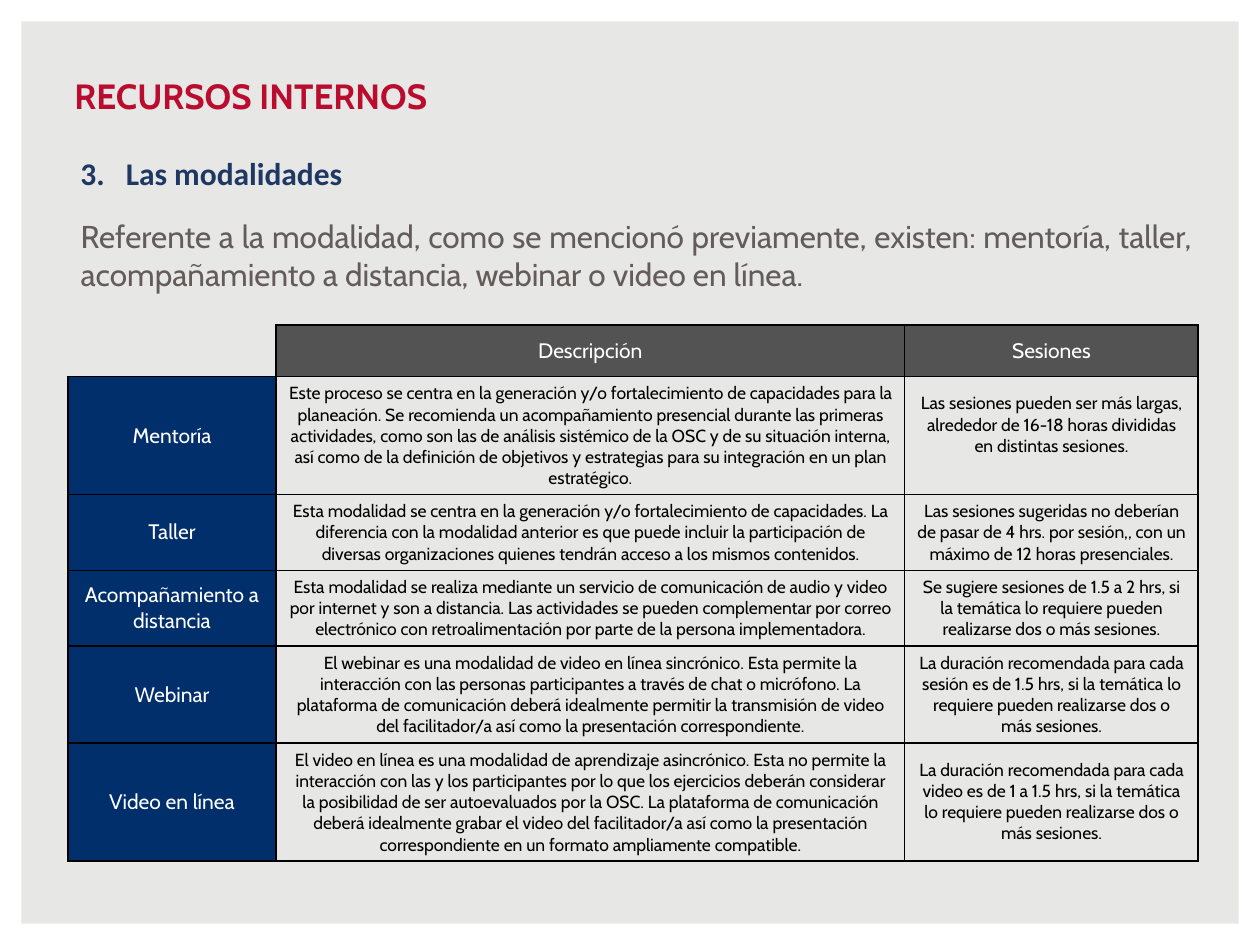
"""Build the slide on the internal resources and their modalities."""
from dataclasses import dataclass
from typing import Optional

from lxml.etree import SubElement
from pptx import Presentation
from pptx.dml.color import RGBColor
from pptx.enum.shapes import MSO_SHAPE
from pptx.enum.text import MSO_ANCHOR, MSO_AUTO_SIZE, PP_ALIGN
from pptx.oxml.ns import qn
from pptx.util import Inches, Pt


@dataclass(frozen=True)
class Theme:
    background: str = "E7E7E5"
    white: str = "FFFFFF"
    black: str = "000000"
    title: str = "BA0C2F"
    heading: str = "1F3763"
    intro: str = "635C5B"
    header_fill: str = "535353"
    label_fill: str = "002F6C"
    font: str = "Cabin"
    heading_font: str = "Calibri"
    title_size: int = 20
    lead_size: int = 18
    label_size: int = 12
    detail_size: int = 10
    border_width: int = 1


@dataclass(frozen=True)
class Modality:
    name: str
    description: str
    sessions: str
    height: float
    sessions_bottom_margin: float = 0.05


THEME = Theme()
LEFT = 0.54
COLUMN_WIDTHS = (1.65, 4.99, 2.33)
HEADER_HEIGHT = 0.41
BORDER_SIDES = ("a:lnL", "a:lnR", "a:lnT", "a:lnB")
MODALITIES = (
    Modality(
        "Mentoría",
        "Este proceso se centra en la generación y/o fortalecimiento de capacidades para la "
        "planeación. Se recomienda un acompañamiento presencial durante las primeras actividades, "
        "como son las de análisis sistémico de la OSC y de su situación interna, así como de la "
        "definición de objetivos y estrategias para su integración en un plan estratégico.",
        "Las sesiones pueden ser más largas, alrededor de 16-18 horas divididas en distintas "
        "sesiones.",
        0.93, 0.22),
    Modality(
        "Taller",
        "Esta modalidad se centra en la generación y/o fortalecimiento de capacidades. La "
        "diferencia con la modalidad anterior es que puede incluir la participación de diversas "
        "organizaciones quienes tendrán acceso a los mismos contenidos.",
        "Las sesiones sugeridas no deberían de pasar de 4 hrs. por sesión,, con un máximo de 12 "
        "horas presenciales.",
        0.6),
    Modality(
        "Acompañamiento a distancia",
        "Esta modalidad se realiza mediante un servicio de comunicación de audio y video por "
        "internet y son a distancia. Las actividades se pueden complementar por correo "
        "electrónico con retroalimentación por parte de la persona implementadora.",
        "Se sugiere sesiones de 1.5 a 2 hrs, si la temática lo requiere pueden realizarse dos o "
        "más sesiones.",
        0.6),
    Modality(
        "Webinar",
        "El webinar es una modalidad de video en línea sincrónico. Esta permite la interacción "
        "con las personas participantes a través de chat o micrófono. La plataforma de "
        "comunicación deberá idealmente permitir la transmisión de video del facilitador/a así "
        "como la presentación correspondiente.",
        "La duración recomendada para cada sesión es de 1.5 hrs, si la temática lo requiere "
        "pueden realizarse dos o más sesiones.",
        0.77),
    Modality(
        "Video en línea",
        "El video en línea es una modalidad de aprendizaje asincrónico. Esta no permite la "
        "interacción con las y los participantes por lo que los ejercicios deberán considerar la "
        "posibilidad de ser autoevaluados por la OSC. La plataforma de comunicación deberá "
        "idealmente grabar el video del facilitador/a así como la presentación correspondiente "
        "en un formato ampliamente compatible.",
        "La duración recomendada para cada video es de 1 a 1.5 hrs, si la temática lo requiere "
        "pueden realizarse dos o más sesiones.",
        0.93),
)


def place(shape, left: float, top: float, width: float, height: float) -> None:
    """Set a shape's position and size in inches."""
    shape.left, shape.top = Inches(left), Inches(top)
    shape.width, shape.height = Inches(width), Inches(height)


def write(frame, wording: str, size: int, color: str, align, font: str = THEME.font,
          bold: bool = False, space_after: int = 0, hanging: Optional[float] = None) -> None:
    """Write one formatted paragraph with an optional hanging indent."""
    frame.text = wording
    frame.word_wrap = True
    paragraph = frame.paragraphs[0]
    paragraph.alignment = align
    paragraph.space_before, paragraph.space_after = Pt(0), Pt(space_after)
    for run in paragraph.runs:
        run.font.name, run.font.size, run.font.bold = font, Pt(size), bold
        run.font.color.rgb = RGBColor.from_string(color)
    if hanging is not None:
        properties = paragraph._p.get_or_add_pPr()
        properties.set("marL", str(Inches(hanging)))
        properties.set("indent", str(-Inches(hanging)))
        SubElement(properties, qn("a:buNone"))


def add_margin_frame(slide) -> None:
    """Draw the white frame around the slide."""
    margin = slide.shapes.add_shape(MSO_SHAPE.FRAME, 0, 0, Inches(10), Inches(7.5))
    margin.adjustments[0] = 0.17 / 7.5
    margin.shadow.inherit = False
    margin.fill.solid()
    margin.fill.fore_color.rgb = RGBColor.from_string(THEME.white)
    margin.line.fill.background()


def add_texts(slide) -> None:
    """Write the title, the numbered heading and the introduction."""
    title, intro = slide.shapes.title, slide.placeholders[1]
    place(title, LEFT, 0.44, 8.5, 0.64)
    title_frame = title.text_frame
    title_frame.margin_left = title_frame.margin_right = Inches(0.05)
    title_frame.margin_top = title_frame.margin_bottom = Inches(0.05)
    title_frame.vertical_anchor = MSO_ANCHOR.MIDDLE
    write(title_frame, "RECURSOS INTERNOS", THEME.title_size, THEME.title, PP_ALIGN.LEFT,
          bold=True)
    title_frame.auto_size = MSO_AUTO_SIZE.NONE

    place(intro, LEFT, 1.67, 9.02, 0.71)
    write(intro.text_frame,
          "Referente a la modalidad, como se mencionó previamente, existen: mentoría, taller, "
          "acompañamiento a distancia, webinar o video en línea.",
          THEME.lead_size, THEME.intro, PP_ALIGN.JUSTIFY, space_after=12, hanging=0)
    intro.text_frame.auto_size = MSO_AUTO_SIZE.NONE

    heading = slide.shapes.add_textbox(Inches(LEFT), Inches(1.17), Inches(2.76), Inches(0.4))
    write(heading.text_frame, "3.\tLas modalidades", THEME.lead_size, THEME.heading,
          PP_ALIGN.LEFT, THEME.heading_font, True, 6, 0.36)


def set_borders(cell, visible: tuple[str, ...] = BORDER_SIDES) -> None:
    """Draw the visible borders of a cell and clear the others."""
    properties = cell._tc.get_or_add_tcPr()
    for position, side in enumerate(BORDER_SIDES):
        border = SubElement(properties, qn(side), w=str(Pt(THEME.border_width)))
        if side in visible:
            fill = SubElement(border, qn("a:solidFill"))
            SubElement(fill, qn("a:srgbClr"), val=THEME.black)
        else:
            SubElement(border, qn("a:noFill"))
        properties.insert(position, border)


def fill_cell(cell, wording: str, fill: Optional[str] = None) -> None:
    """Format a coloured label cell or a plain detail cell."""
    if fill:
        cell.fill.solid()
        cell.fill.fore_color.rgb = RGBColor.from_string(fill)
        size, color = THEME.label_size, THEME.white
    else:
        cell.fill.background()
        size, color = THEME.detail_size, THEME.black
    cell.vertical_anchor = MSO_ANCHOR.MIDDLE
    write(cell.text_frame, wording, size, color, PP_ALIGN.CENTER)
    set_borders(cell)


def add_modalities_table(slide) -> None:
    """Add the table of modalities, descriptions and sessions."""
    heights = (HEADER_HEIGHT, *(modality.height for modality in MODALITIES))
    table = slide.shapes.add_table(
        len(heights), len(COLUMN_WIDTHS), Inches(LEFT), Inches(2.58),
        Inches(sum(COLUMN_WIDTHS)), Inches(sum(heights))).table
    table.first_row = table.horz_banding = False
    for column, width in zip(table.columns, COLUMN_WIDTHS):
        column.width = Inches(width)
    for row, height in zip(table.rows, heights):
        row.height = Inches(height)

    corner = table.cell(0, 0)
    corner.fill.background()
    set_borders(corner, ("a:lnR", "a:lnB"))
    for index, header in enumerate(("Descripción", "Sesiones"), 1):
        fill_cell(table.cell(0, index), header, THEME.header_fill)
    for index, modality in enumerate(MODALITIES, 1):
        fill_cell(table.cell(index, 0), modality.name, THEME.label_fill)
        fill_cell(table.cell(index, 1), modality.description)
        sessions = table.cell(index, 2)
        fill_cell(sessions, modality.sessions)
        sessions.margin_bottom = Inches(modality.sessions_bottom_margin)


def main() -> None:
    """Build and save the presentation."""
    presentation = Presentation()
    presentation.slide_width, presentation.slide_height = Inches(10), Inches(7.5)
    slide = presentation.slides.add_slide(presentation.slide_layouts[1])
    slide.background.fill.solid()
    slide.background.fill.fore_color.rgb = RGBColor.from_string(THEME.background)
    add_margin_frame(slide)
    add_texts(slide)
    add_modalities_table(slide)
    presentation.save("out.pptx")


if __name__ == "__main__":
    main()
